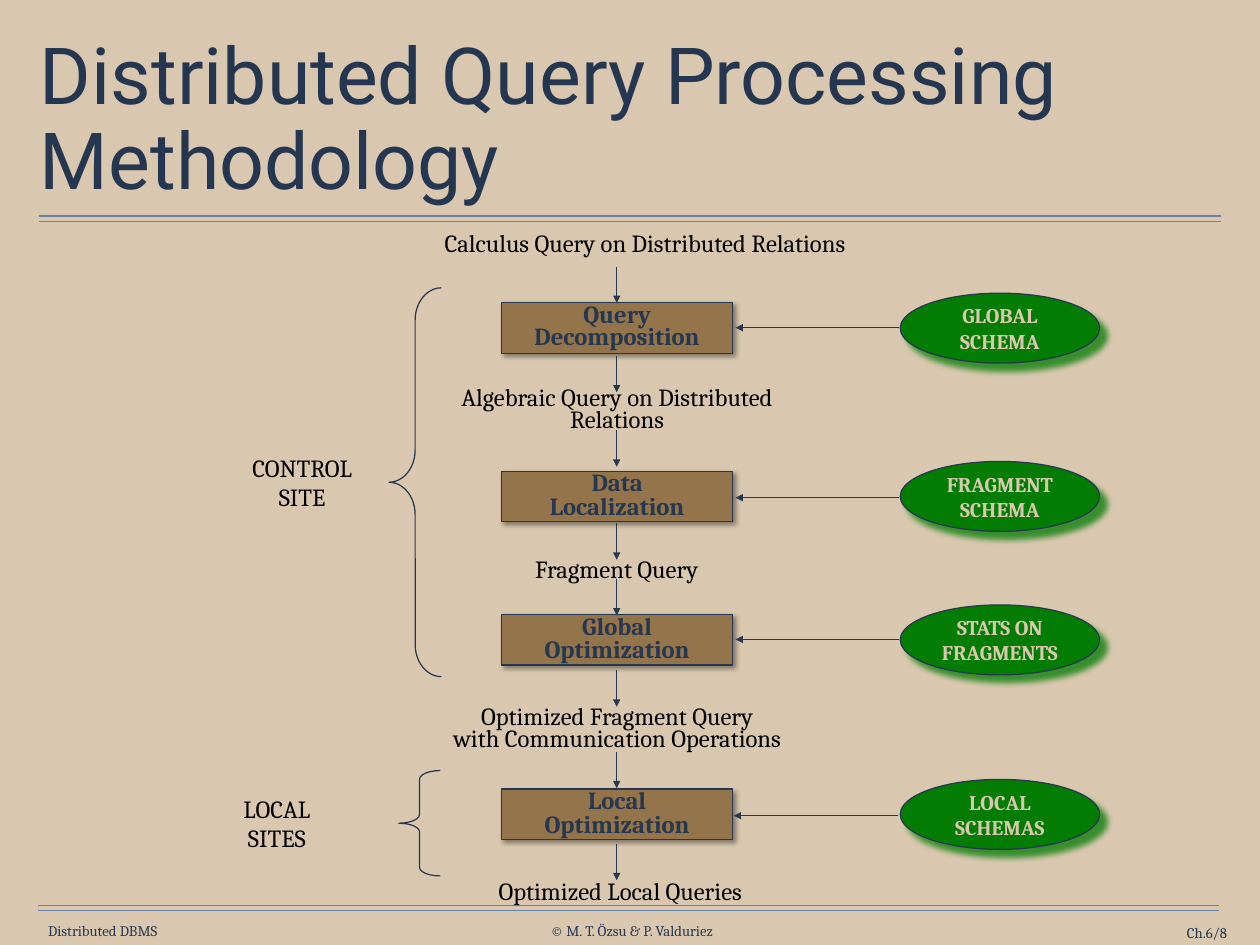
from dataclasses import dataclass

from pptx import Presentation, util as u
from pptx.dml.color import RGBColor
from pptx.enum import shapes as sh, text as tx
from pptx.oxml import parse_xml
from pptx.oxml.ns import nsdecls

PX = 9144  # 100 px to the inch


@dataclass(frozen=True)
class Theme:
    sand: str = "D9C8AF"
    rule: str = "6682AA"
    navy: str = "263750"
    head: str = "253750"
    ink: str = "000000"
    brown: str = "93744B"
    green: str = "037C03"
    font: str = "Cambria"
    title: str = "Roboto"
    huge: int = 64
    body: int = 20
    oval: int = 17
    small: int = 12


T = Theme()
MID, LEFT, RIGHT = tx.PP_ALIGN.CENTER, tx.PP_ALIGN.LEFT, tx.PP_ALIGN.RIGHT

# top, words, line spacing, schema, link drop from step top, link shift
STEPS = [
    (84, "Query\nDecomposition", 0.75, "GLOBAL\nSCHEMA", 28, 0),
    (274, "Data\nLocalization", 0.8, "FRAGMENT\nSCHEMA", 30, 0),
    (436, "Global\nOptimization", 0.8, "STATS ON\nFRAGMENTS", 28, 0),
    (633, "Local\nOptimization", 0.8, "LOCAL\nSCHEMAS", 30, -2),
]
# left, top, width, height, words, line spacing
STAGES = [
    (-123, 0, 570, 41, "Calculus Query on Distributed Relations", 0.75),
    (-81, 174, 423, 66, "Algebraic Query on Distributed\nRelations", 0.75),
    (12, 360, 236, 48, "Fragment Query", 1),
    (-89, 534, 439, 66,
     "Optimized Fragment Query\nwith Communication Operations", 0.75),
    (-52, 732, 372, 41, "Optimized Local Queries", 0.75),
]
DROPS = [43, 144, 228, 333, 396, 499, 591, 695]
# brace box, curve, label box, words
SITES = [
    ((185, 67, 59, 439), 0.617, (0, 246, 174, 81), "CONTROL\nSITE"),
    ((196, 612, 47, 119), 0.208, (-4, 631, 125, 81), "LOCAL\nSITES"),
]


def px(*vals):
    return [u.Emu(v * PX) for v in vals]


def rgb(code):
    return RGBColor.from_string(code)


def write(shape, words, size, color, font=T.font, bold=False, align=MID,
          space=1, pad=(14, 7), anchor=tx.MSO_ANCHOR.MIDDLE, wrap=False):
    frame = shape.text_frame
    frame.text = words
    frame.word_wrap = wrap
    frame.vertical_anchor = anchor
    frame.margin_left = frame.margin_right = px(pad[0])[0]
    frame.margin_top = frame.margin_bottom = px(pad[1])[0]
    for para in frame.paragraphs:
        para.alignment = align
        para.line_spacing = space
        for run in para.runs:
            run.font.name = font
            run.font.size = u.Pt(size)
            run.font.bold = bold
            run.font.color.rgb = rgb(color)


def label(slide, box, words, size=T.body, color=T.ink, **style):
    write(slide.shapes.add_textbox(*px(*box)), words, size, color, **style)


def line(slide, ends, color=T.navy, arrow=False):
    kind = sh.MSO_CONNECTOR.STRAIGHT
    link = slide.shapes.add_connector(kind, *px(*ends))
    link.line.color.rgb = rgb(color)
    link.line.width = u.Pt(1)
    props = link._element.spPr
    if arrow:
        props.find(".//{*}solidFill").getparent().append(
            parse_xml(f'<a:tailEnd {nsdecls("a")} type="triangle"/>'))
    props.append(parse_xml(f'<a:effectLst {nsdecls("a")}/>'))


def form(slide, kind, box, fill=None):
    shape = slide.shapes.add_shape(kind, *px(*box))
    shape.shadow.inherit = False
    shape.line.color.rgb = rgb(T.navy)
    shape.line.width = u.Pt(1)
    if fill:
        shape.fill.solid()
        shape.fill.fore_color.rgb = rgb(fill)
    else:
        shape.fill.background()
    return shape


def shade(shape, color, alpha, blur, dist):
    """Cast a shadow to the lower right; blur and dist are in points."""
    shape._element.spPr.find("{*}effectLst").append(parse_xml(
        f'<a:outerShdw {nsdecls("a")} blurRad="{u.Pt(blur)}" '
        f'dist="{u.Pt(dist)}" dir="2700000" algn="ctr" rotWithShape="0">'
        f'<a:srgbClr val="{color}"><a:alpha val="{alpha * 1000}"/>'
        '</a:srgbClr></a:outerShdw>'))


def rules(slide, x, y, w):
    for top in (y, y + 6):
        line(slide, (x, top, x + w, top), T.rule)


def header(slide, box):
    x, y, w, h = box
    rules(slide, x + 5, y + 195, w - 10)
    label(slide, box, "Distributed Query Processing Methodology", T.huge,
          T.head, font=T.title, align=LEFT, space=0.9, pad=(6, 6), wrap=True)


def footer(slide, box):
    x, y, w, h = box
    rules(slide, x, y, w)
    for left, top, wide, words, align in (
            (4, 19, 138, "Distributed DBMS", MID),
            (566, 19, 208, "© M. T. Özsu & P. Valduriez", MID),
            (1188, 21, 154, "Ch.6/8", RIGHT)):
        label(slide, (x + left, y + top, wide, h - 21), words, T.small,
              T.navy, align=align, pad=(0, 0))


def flow(slide, box):
    """Draw the column of stages and steps, each step fed by a schema."""
    x, y, w, h = box
    for left, top, wide, high, words, space in STAGES:
        label(slide, (x + left, y + top, wide, high), words, space=space,
              anchor=tx.MSO_ANCHOR.TOP)
    for top, words, space, schema, drop, shift in STEPS:
        top += y
        step = form(slide, sh.MSO_SHAPE.RECTANGLE, (x, top, w, 57), T.brown)
        shade(step, T.ink, 40, 4, 3)
        write(step, words, T.body, T.navy, bold=True, space=space)
        oval = form(slide, sh.MSO_SHAPE.OVAL,
                    (x + w + 189, top - 11, 225, 79), T.green)
        shade(oval, T.green, 75, 5, 8.5)
        write(oval, schema, T.oval, T.sand, bold=True)
        end = x + w + 3 + shift
        line(slide, (end + 185, top + drop, end, top + drop), arrow=True)
    for top in DROPS:
        line(slide, (x + 130, y + top, x + 130, y + top + 41), arrow=True)


def sites(slide, box):
    x, y, w, h = box
    for (bx, by, bw, bh), curve, (lx, ly, lw, lh), words in SITES:
        brace = form(slide, sh.MSO_SHAPE.LEFT_BRACE, (x + bx, y + by, bw, bh))
        brace.adjustments[0] = curve
        label(slide, (x + lx, y + ly, lw, lh), words,
              anchor=tx.MSO_ANCHOR.TOP)


def main():
    deck = Presentation()
    deck.slide_width, deck.slide_height = px(1422, 1067)
    slide = deck.slides.add_slide(deck.slide_layouts[6])
    slide.background.fill.solid()
    slide.background.fill.fore_color.rgb = rgb(T.sand)
    header(slide, (39, 49, 1344, 176))
    footer(slide, (43, 1022, 1333, 41))
    flow(slide, (566, 258, 261, 773))
    sites(slide, (254, 258, 244, 773))
    deck.save("out.pptx")


if __name__ == "__main__":
    main()
